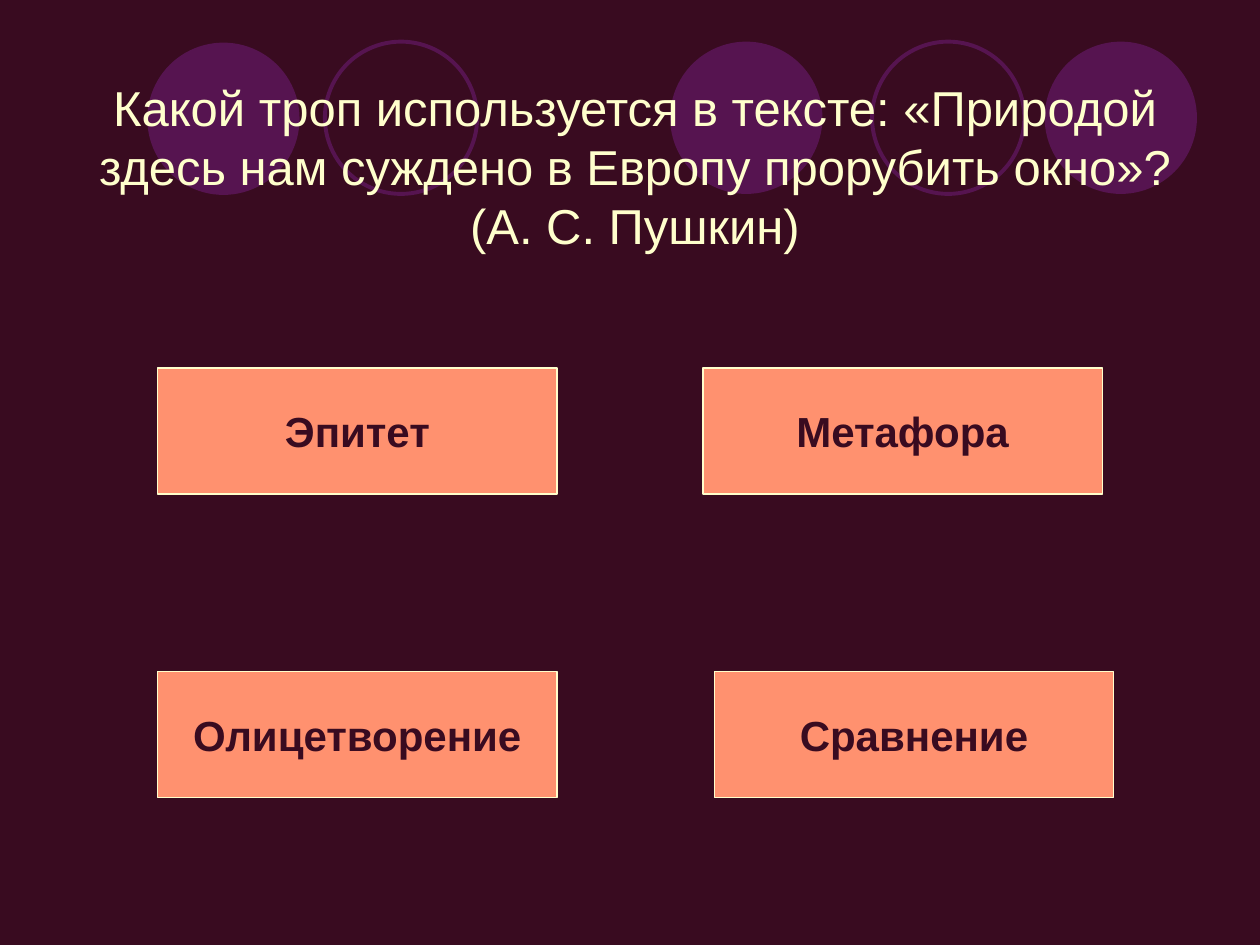
"""Build a quiz slide with a question and four answer boxes."""
import dataclasses

import pptx
import pptx.dml.color
import pptx.enum.shapes
import pptx.enum.text
import pptx.util

Cm = pptx.util.Cm
Pt = pptx.util.Pt
SHAPE = pptx.enum.shapes.MSO_SHAPE
COLORS = {"background": "390B20", "circle": "561450", "cream": "FFFFCC", "answer": "FF916F"}
QUESTION = (
    "Какой троп используется в тексте: «Природой здесь нам суждено "
    "в Европу прорубить окно»? (А. С. Пушкин)"
)
CIRCLE_SIZE = 3.07
ANSWER_WIDTH, ANSWER_HEIGHT = 8.05, 2.54


@dataclasses.dataclass
class Circle:
    """A decorative circle, filled or outlined."""
    left: float
    filled: bool
    top: float = 0.84


@dataclasses.dataclass
class Answer:
    """An answer box."""
    text: str
    left: float
    top: float


CIRCLES = [
    Circle(13.51, True),
    Circle(21.06, True),
    Circle(2.97, True, 0.86),
    Circle(17.58, False),
    Circle(6.55, False),
]
ANSWERS = [
    Answer("Эпитет", 3.18, 7.42),
    Answer("Метафора", 14.17, 7.42),
    Answer("Олицетворение", 3.18, 13.54),
    Answer("Сравнение", 14.4, 13.54),
]


def rgb(name: str) -> pptx.dml.color.RGBColor:
    """Return a palette colour."""
    return pptx.dml.color.RGBColor.from_string(COLORS[name])


def write(tf, text: str, size: float, color: str, bold: bool = False) -> None:
    """Write one centred run in the middle of a text frame."""
    tf.vertical_anchor = pptx.enum.text.MSO_ANCHOR.MIDDLE
    p = tf.paragraphs[0]
    p.alignment = pptx.enum.text.PP_ALIGN.CENTER
    r = p.add_run()
    r.text = text
    r.font.name = "Arial"
    r.font.size = Pt(size)
    r.font.bold = bold
    r.font.color.rgb = rgb(color)


def draw_circle(s, circle: Circle) -> None:
    """Draw a decorative circle."""
    sp = s.shapes.add_shape(
        SHAPE.OVAL, Cm(circle.left), Cm(circle.top), Cm(CIRCLE_SIZE), Cm(CIRCLE_SIZE)
    )
    sp.shadow.inherit = False
    if circle.filled:
        sp.fill.solid()
        sp.fill.fore_color.rgb = rgb("circle")
        sp.line.fill.background()
    else:
        sp.fill.background()
        sp.line.color.rgb = rgb("circle")
        sp.line.width = Pt(2.25)


def draw_answer(s, answer: Answer) -> None:
    """Draw an answer box."""
    sp = s.shapes.add_shape(
        SHAPE.RECTANGLE, Cm(answer.left), Cm(answer.top), Cm(ANSWER_WIDTH), Cm(ANSWER_HEIGHT)
    )
    sp.shadow.inherit = False
    sp.fill.solid()
    sp.fill.fore_color.rgb = rgb("answer")
    sp.line.color.rgb = rgb("cream")
    sp.line.width = Pt(0.75)
    sp.text_frame.word_wrap = False
    write(sp.text_frame, answer.text, 24, "background", bold=True)


def main() -> None:
    """Build and save the slide."""
    prs = pptx.Presentation()
    prs.slide_width, prs.slide_height = Cm(25.4), Cm(19.05)
    s = prs.slides.add_slide(prs.slide_layouts[5])
    s.background.fill.solid()
    s.background.fill.fore_color.rgb = rgb("background")

    for circle in CIRCLES:
        draw_circle(s, circle)

    title = s.shapes.title
    title.element.getparent().append(title.element)
    title.left, title.top, title.width, title.height = Cm(1.27), Cm(0.76), Cm(23.06), Cm(5.16)
    title.text_frame.word_wrap = True
    title.text_frame.auto_size = pptx.enum.text.MSO_AUTO_SIZE.NONE
    write(title.text_frame, QUESTION, 28, "cream")

    for answer in ANSWERS:
        draw_answer(s, answer)
    prs.save("out.pptx")


if __name__ == "__main__":
    main()
